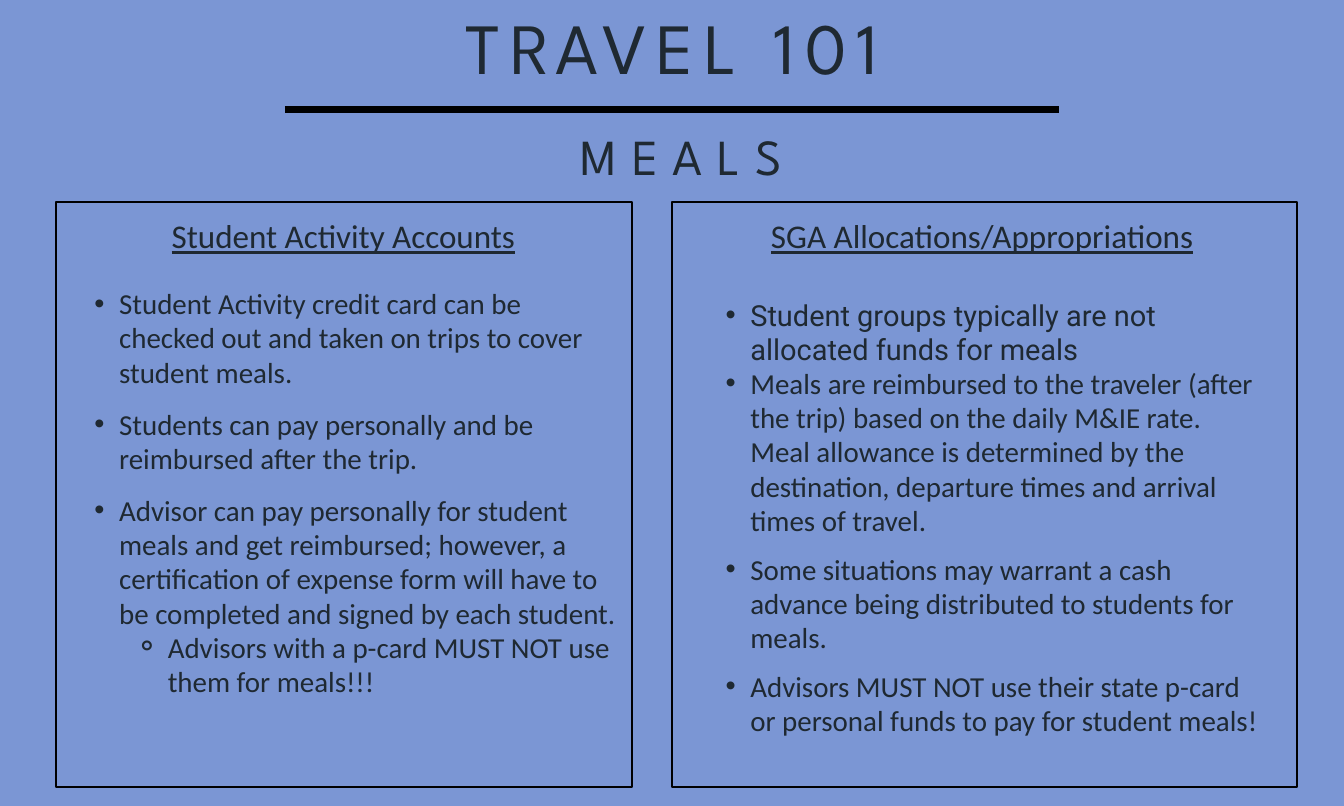
from dataclasses import dataclass

from lxml import etree
from pptx import Presentation
from pptx.dml.color import RGBColor
from pptx.enum.shapes import MSO_CONNECTOR, MSO_SHAPE
from pptx.enum.text import MSO_AUTO_SIZE, PP_ALIGN
from pptx.oxml.ns import qn
from pptx.slide import Slide
from pptx.util import Pt

CENTER, LEFT = PP_ALIGN.CENTER, PP_ALIGN.LEFT
FIT = MSO_AUTO_SIZE.SHAPE_TO_FIT_TEXT
RECT, STRAIGHT = MSO_SHAPE.RECTANGLE, MSO_CONNECTOR.STRAIGHT


@dataclass(frozen=True)
class Theme:
    back: RGBColor = RGBColor(0x7B, 0x96, 0xD4)
    ink: RGBColor = RGBColor(0x1F, 0x29, 0x32)
    rule: RGBColor = RGBColor(0, 0, 0)
    body: str = "Calibri"
    alt: str = "Roboto"
    show: str = "League Spartan"
    title: float = 52.3
    topic: float = 36.6
    head: float = 24
    text: float = 21


THEME = Theme()


@dataclass(frozen=True)
class Area:
    left: float
    top: float
    width: float
    height: float

    def points(self) -> list[Pt]:
        return [Pt(n) for n in (self.left, self.top, self.width, self.height)]


@dataclass(frozen=True)
class Bullet:
    mark: str
    level: int
    margin: float
    hang: float


DOT = Bullet("•", 1, 36, 18)
RING = Bullet("⚬", 2, 71.3, 23.8)


@dataclass(frozen=True)
class Line:
    text: str
    size: float = THEME.text
    pitch: float = 24.8
    before: float = 0
    font: str = THEME.body
    bullet: Bullet | None = DOT
    under: bool = False
    track: float = 0


@dataclass(frozen=True)
class Panel:
    frame: Area
    inner: Area
    lines: list[Line]


def header(text: str) -> Line:
    return Line(text, THEME.head, 28.3, bullet=None, under=True)


PANELS = [
    Panel(Area(40.3, 146.2, 418.3, 424.8), Area(50.4, 157, 397.4, 371.5), [
        header("Student Activity Accounts"),
        Line("Student Activity credit card can be checked out and taken on trips "
             "to cover student meals.", before=22.4),
        Line("Students can pay personally and be reimbursed after the trip.",
             before=13),
        Line("Advisor can pay personally for student meals and get reimbursed; "
             "however, a certification of expense form will have to be completed "
             "and signed by each student.", before=13),
        Line("Advisors with a p-card MUST NOT use them for meals!!!", bullet=RING),
    ]),
    Panel(Area(487.4, 146.2, 453.6, 424.8), Area(508.3, 157, 408.2, 400.3), [
        header("SGA Allocations/Appropriations"),
        Line("Student groups typically are not allocated funds for meals",
             before=30.7, font=THEME.alt),
        Line("Meals are reimbursed to the traveler (after the trip) based on the "
             "daily M&IE rate. Meal allowance is determined by the destination, "
             "departure times and arrival times of travel."),
        Line("Some situations may warrant a cash advance being distributed to "
             "students for meals.", before=10.6),
        Line("Advisors MUST NOT use their state p-card or personal funds to pay "
             "for student meals!", before=10.6),
    ]),
]

TITLES = [
    (Area(279.4, 83.5, 429.8, 48.2),
     Line("MEALS", THEME.topic, 51.3, font=THEME.show, bullet=None, track=11)),
    (Area(40.3, 19.4, 894.2, 51.1),
     Line("TRAVEL 101", THEME.title, 45, font=THEME.show, bullet=None, track=6.9)),
]


def apply(target: object, values: dict[str, object]) -> None:
    for name, value in values.items():
        setattr(target, name, value)


def add_bullet(para: object, bullet: Bullet) -> None:
    para.level = bullet.level
    props = para._p.get_or_add_pPr()
    props.set("marL", str(Pt(bullet.margin)))
    props.set("indent", str(-Pt(bullet.hang)))
    etree.SubElement(props, qn("a:buFont")).set("typeface", "Arial")
    etree.SubElement(props, qn("a:buChar")).set("char", bullet.mark)


def add_text(slide: Slide, area: Area, lines: list[Line]) -> None:
    frame = slide.shapes.add_textbox(*area.points()).text_frame
    apply(frame, {"word_wrap": True, "auto_size": FIT, "margin_left": 0,
                  "margin_top": 0, "margin_right": 0, "margin_bottom": 0})
    for i, line in enumerate(lines):
        para = frame.add_paragraph() if i else frame.paragraphs[0]
        apply(para, {"alignment": LEFT if line.bullet else CENTER,
                     "line_spacing": Pt(line.pitch),
                     "space_before": Pt(line.before)})
        if line.bullet:
            add_bullet(para, line.bullet)
        run = para.add_run()
        run.text = line.text
        apply(run.font, {"name": line.font, "size": Pt(line.size),
                         "underline": line.under})
        run.font.color.rgb = THEME.ink
        if line.track:
            run.font._element.set("spc", str(round(line.track * 100)))


def add_panel(slide: Slide, panel: Panel) -> None:
    box = slide.shapes.add_shape(RECT, *panel.frame.points())
    box.shadow.inherit = False
    box.fill.background()
    box.line.color.rgb = THEME.rule
    box.line.width = Pt(1.5)
    add_text(slide, panel.inner, panel.lines)


def add_rule(slide: Slide, left: float, right: float, top: float) -> None:
    rule = slide.shapes.add_connector(
        STRAIGHT, Pt(left), Pt(top), Pt(right), Pt(top))
    rule.line.color.rgb = THEME.rule
    rule.line.width = Pt(5)
    etree.SubElement(rule._element.spPr, qn("a:effectLst"))


def main() -> None:
    deck = Presentation()
    apply(deck, {"slide_width": Pt(974.9), "slide_height": Pt(584.6)})
    slide = deck.slides.add_slide(deck.slide_layouts[6])
    slide.background.fill.solid()
    slide.background.fill.fore_color.rgb = THEME.back
    for panel in PANELS:
        add_panel(slide, panel)
    add_rule(slide, 206.6, 768.2, 79.2)
    for area, line in TITLES:
        add_text(slide, area, [line])
    deck.save("out.pptx")


if __name__ == "__main__":
    main()
